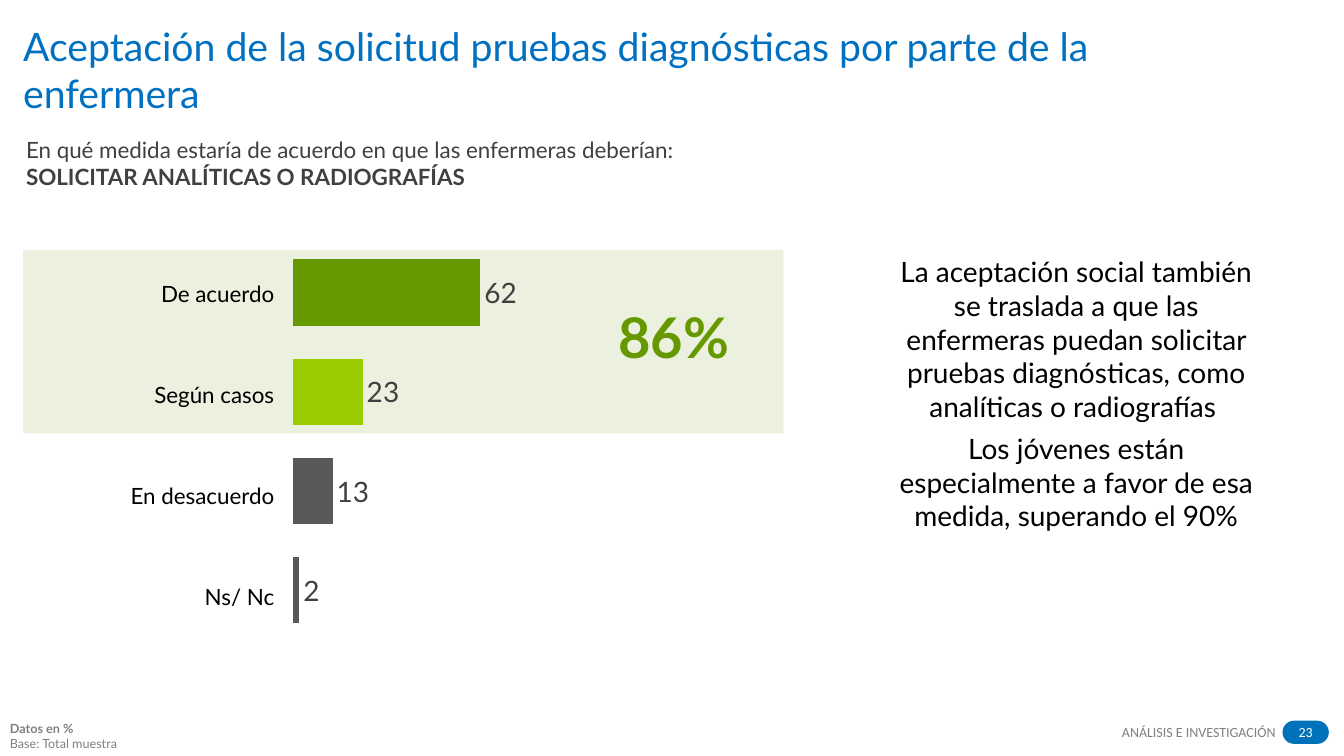
from lxml import etree
from pptx import Presentation
from pptx.chart.data import CategoryChartData
from pptx.dml.color import RGBColor
from pptx.enum.chart import XL_CHART_TYPE, XL_LABEL_POSITION
from pptx.enum.shapes import MSO_SHAPE
from pptx.enum.text import MSO_ANCHOR, PP_ALIGN
from pptx.oxml import parse_xml
from pptx.oxml.ns import nsdecls, qn
from pptx.util import Pt

PX = 9144
BLUE = RGBColor(0x00, 0x70, 0xC0)
PILL = RGBColor(0x00, 0x72, 0xBA)
GREEN = RGBColor(0x66, 0x99, 0x00)
LIME = RGBColor(0x99, 0xCC, 0x00)
BAND = RGBColor(0xEB, 0xF1, 0xDE)
BAR_GRAY = RGBColor(0x59, 0x59, 0x59)
DARK = RGBColor(0x40, 0x40, 0x40)
GRAY = RGBColor(0x80, 0x80, 0x80)
BLACK = RGBColor(0x00, 0x00, 0x00)
WHITE = RGBColor(0xFF, 0xFF, 0xFF)
NO_GRID = "{2D5ABB26-0587-4C30-8999-92F81FD0307C}"

ANSWERS = [
    ("De acuerdo", 62, GREEN),
    ("Según casos", 23, LIME),
    ("En desacuerdo", 13, BAR_GRAY),
    ("Ns/ Nc", 2, BAR_GRAY),
]


class SlideBuilder:
    font = "Lato"

    def __init__(self, slide):
        self.slide = slide

    def emu(self, box):
        return [n * PX for n in box]

    def add_lines(self, tf, lines, size, color, align=PP_ALIGN.LEFT, after=0, font=None):
        for i, (text, bold) in enumerate(lines):
            p = tf.paragraphs[0] if i == 0 else tf.add_paragraph()
            p.alignment = align
            p.space_after = Pt(after)
            r = p.add_run()
            r.text = text
            r.font.name = font or self.font
            r.font.size = Pt(size)
            r.font.bold = bold
            r.font.color.rgb = color

    def title(self, box, text, size, color):
        sp = self.slide.shapes.title
        sp.left, sp.top, sp.width, sp.height = self.emu(box)
        sp.text_frame.vertical_anchor = MSO_ANCHOR.TOP
        self.add_lines(sp.text_frame, [(text, False)], size, color)

    def text(self, box, lines, size, color, anchor=MSO_ANCHOR.TOP, **style):
        tf = self.slide.shapes.add_textbox(*self.emu(box)).text_frame
        tf.word_wrap = True
        tf.vertical_anchor = anchor
        self.add_lines(tf, lines, size, color, **style)

    def shape(self, kind, box, color):
        sp = self.slide.shapes.add_shape(kind, *self.emu(box))
        sp.shadow.inherit = False
        sp.fill.solid()
        sp.fill.fore_color.rgb = color
        sp.line.fill.background()
        return sp

    def bars(self, box, answers):
        data = CategoryChartData(number_format="#,##0")
        data.categories = [str(i + 1) for i in range(len(answers))]
        data.add_series("Series 1", [value for _, value, _ in answers])
        chart = self.slide.shapes.add_chart(
            XL_CHART_TYPE.BAR_CLUSTERED, *self.emu(box), data).chart
        chart.has_legend = False
        chart.has_title = False
        chart.font.name = "Calibri"
        chart.font.size = Pt(11)
        chart.font.color.rgb = DARK
        chart.category_axis.reverse_order = True
        chart.category_axis.visible = False
        axis = chart.value_axis
        axis.minimum_scale, axis.maximum_scale = 0, 100
        axis.has_major_gridlines = False
        axis.visible = False
        plot = chart.plots[0]
        plot.gap_width = 50
        plot.vary_by_categories = False
        plot.has_data_labels = True
        labels = plot.data_labels
        labels.show_value = True
        labels.position = XL_LABEL_POSITION.OUTSIDE_END
        labels.number_format = "#,##0"
        labels.number_format_is_linked = False
        labels.font.name = self.font
        labels.font.size = Pt(20)
        labels.font.color.rgb = DARK
        for i, (_, _, color) in enumerate(answers):
            fill = plot.series[0].points[i].format.fill
            fill.solid()
            fill.fore_color.rgb = color
        self.place_plot(chart, x=0.0, y=0.0, w=0.85, h=0.99)

    def place_plot(self, chart, **edges):
        area = chart.plots[0]._element.getparent()
        for old in area.findall(qn("c:layout")):
            area.remove(old)
        layout = parse_xml(f"<c:layout {nsdecls('c')}><c:manualLayout/></c:layout>")
        settings = {"layoutTarget": "inner", "xMode": "edge", "yMode": "edge", **edges}
        for tag, value in settings.items():
            etree.SubElement(layout[0], qn(f"c:{tag}")).set("val", str(value))
        area.insert(0, layout)

    def labels(self, box, names, size):
        table = self.slide.shapes.add_table(len(names), 1, *self.emu(box)).table
        table.first_row = False
        table.horz_banding = False
        table._tbl.tblPr.find(qn("a:tableStyleId")).text = NO_GRID
        for i, name in enumerate(names):
            cell = table.cell(i, 0)
            cell.fill.background()
            cell.vertical_anchor = MSO_ANCHOR.MIDDLE
            cell.margin_left = cell.margin_right = cell.margin_top = PX
            cell.margin_bottom = 0
            self.add_lines(cell.text_frame, [(name, False)], size, BLACK, PP_ALIGN.RIGHT)


def main():
    prs = Presentation()
    prs.slide_width, prs.slide_height = 1333 * PX, 750 * PX
    s = SlideBuilder(prs.slides.add_slide(prs.slide_layouts[5]))

    pill = s.shape(MSO_SHAPE.ROUNDED_RECTANGLE, (1272, 715, 46, 23), PILL)
    pill.adjustments[0] = 0.5
    s.text((1254, 713, 82, 27), [("23", False)], 10, WHITE,
           MSO_ANCHOR.MIDDLE, align=PP_ALIGN.CENTER, font="Calibri")
    s.text((1035, 713, 240, 27), [("ANÁLISIS E INVESTIGACIÓN", False)], 10, GRAY,
           MSO_ANCHOR.MIDDLE, align=PP_ALIGN.RIGHT, font="Calibri")
    s.title((13, 17, 1134, 104),
            "Aceptación de la solicitud pruebas diagnósticas por parte de la enfermera",
            28, BLUE)
    s.text((870, 248, 395, 288), [
        ("La aceptación social también se traslada a que las enfermeras puedan "
         "solicitar pruebas diagnósticas, como analíticas o radiografías ", False),
        ("Los jóvenes están especialmente a favor de esa medida, superando el 90%", False),
    ], 20, BLACK, align=PP_ALIGN.CENTER, after=6)
    s.text((0, 711, 1100, 39), [("Datos en %", True), ("Base: Total muestra", False)],
           9, GRAY, MSO_ANCHOR.BOTTOM)
    s.text((16, 130, 1068, 64), [
        ("En qué medida estaría de acuerdo en que las enfermeras deberían:", False),
        ("SOLICITAR ANALÍTICAS O RADIOGRAFÍAS", True),
    ], 16, DARK)
    s.shape(MSO_SHAPE.RECTANGLE, (23, 248, 754, 182), BAND)
    s.bars((291, 241, 352, 398), ANSWERS)
    s.labels((115, 241, 158, 401), [name for name, _, _ in ANSWERS], 16)
    s.text((599, 306, 138, 55), [("86%", True)], 40, GREEN,
           MSO_ANCHOR.MIDDLE, align=PP_ALIGN.CENTER)

    prs.save("out.pptx")


if __name__ == "__main__":
    main()
